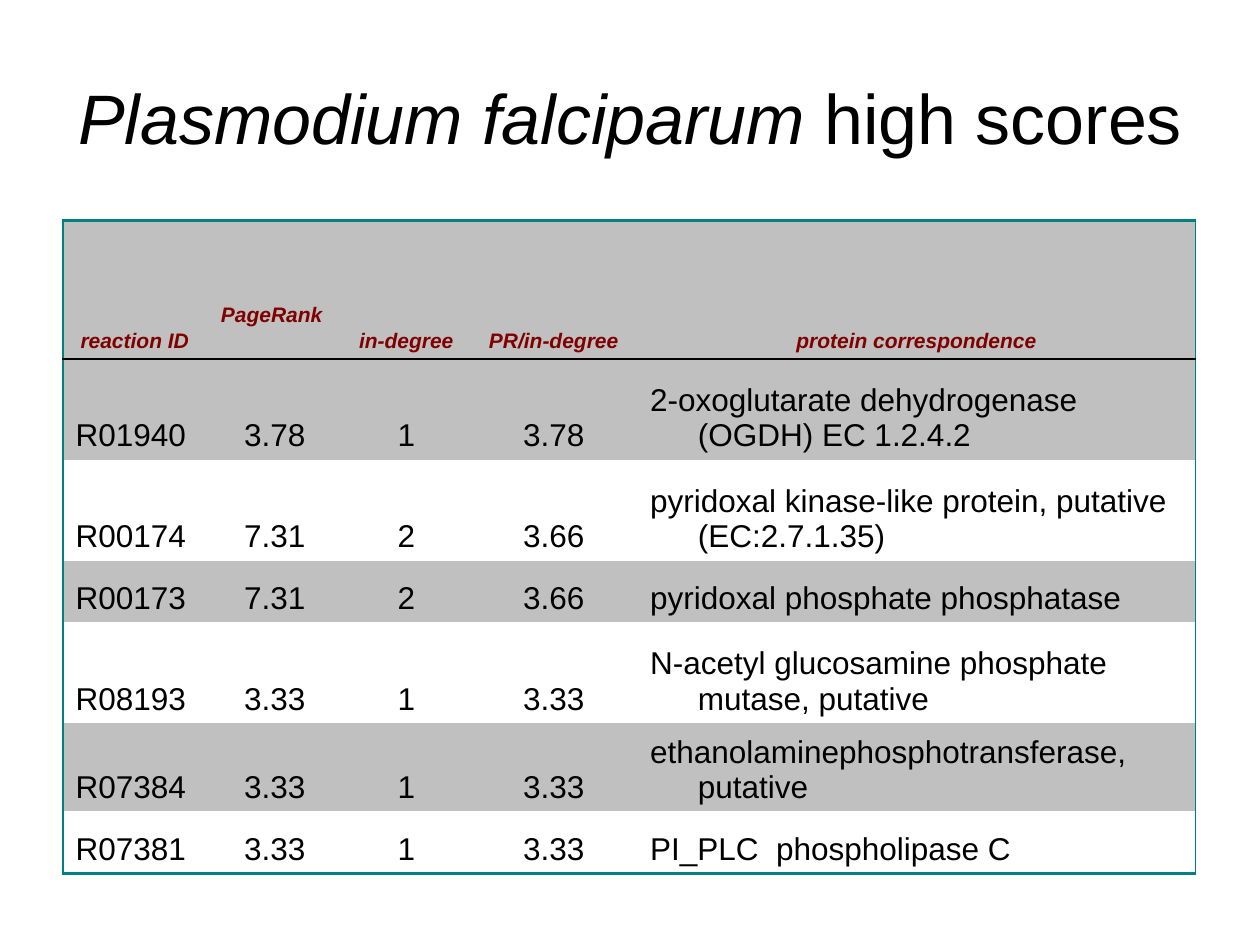
from dataclasses import dataclass

from lxml.etree import SubElement
from pptx import Presentation
from pptx.dml.color import RGBColor
from pptx.enum.text import MSO_ANCHOR, PP_ALIGN
from pptx.oxml import parse_xml
from pptx.oxml.ns import nsdecls, qn
from pptx.util import Inches, Pt


@dataclass(frozen=True)
class Theme:
    font: str = "Arial"
    text: str = "000000"
    heading: str = "800000"
    frame: str = "008080"
    rule: str = "000000"
    shaded: str = "C0C0C0"
    plain: str = "FFFFFF"
    title_size: int = 40
    heading_size: int = 12
    body_size: int = 18


THEME = Theme()
HEADINGS = ["reaction ID", "PageRank \v", "in-degree", "PR/in-degree",
            "protein correspondence"]
REACTIONS = [
    ("R01940", "3.78", "1", "3.78", "2-oxoglutarate dehydrogenase (OGDH) EC 1.2.4.2"),
    ("R00174", "7.31", "2", "3.66", "pyridoxal kinase-like protein, putative (EC:2.7.1.35)"),
    ("R00173", "7.31", "2", "3.66", "pyridoxal phosphate phosphatase"),
    ("R08193", "3.33", "1", "3.33", "N-acetyl glucosamine phosphate mutase, putative"),
    ("R07384", "3.33", "1", "3.33", "ethanolaminephosphotransferase, putative"),
    ("R07381", "3.33", "1", "3.33", "PI_PLC  phospholipase C"),
]
COLUMN_WIDTHS = [1.14, 1.08, 1.01, 1.33, 4.43]
ROW_HEIGHTS = [1.1, 0.8, 0.8, 0.49, 0.8, 0.49, 0.49]
HANGING_INDENT = 0.38

HEADING_FORMAT = {"size": Pt(THEME.heading_size), "bold": True, "italic": True}
BODY_FORMAT = {"size": Pt(THEME.body_size), "bold": False, "italic": False}


def format_run(run, color, values):
    run.font.name = THEME.font
    run.font.color.rgb = RGBColor.from_string(color)
    for attribute, value in values.items():
        setattr(run.font, attribute, value)


def add_title(slide):
    title = slide.shapes.add_textbox(Inches(0.5), Inches(0.3), Inches(9), Inches(1.25))
    frame = title.text_frame
    frame.word_wrap = True
    frame.vertical_anchor = MSO_ANCHOR.MIDDLE
    paragraph = frame.paragraphs[0]
    paragraph.alignment = PP_ALIGN.CENTER
    for words, italic in [("Plasmodium falciparum", True), (" high scores", False)]:
        run = paragraph.add_run()
        run.text = words
        format_run(run, THEME.text, {"size": Pt(THEME.title_size), "italic": italic})


def set_borders(cell, borders):
    """Draw the sides in borders, a dict of side to (colour, points); clear the rest."""
    properties = cell._tc.get_or_add_tcPr()
    for position, side in enumerate("LRTB"):
        if side in borders:
            color, points = borders[side]
            width = Pt(points)
            fill = f'<a:solidFill><a:srgbClr val="{color}"/></a:solidFill>'
        else:
            width, fill = 0, "<a:noFill/>"
        properties.insert(position, parse_xml(
            f'<a:ln{side} {nsdecls("a")} w="{width}">{fill}</a:ln{side}>'))


def borders_at(row, column):
    borders = {}
    if column == 0:
        borders["L"] = (THEME.frame, 1)
    if column == len(COLUMN_WIDTHS) - 1:
        borders["R"] = (THEME.frame, 1)
    if row == 0:
        borders["T"] = (THEME.frame, 2)
        borders["B"] = (THEME.rule, 1)
    if row == 1:
        borders["T"] = (THEME.rule, 1)
    if row == len(ROW_HEIGHTS) - 1:
        borders["B"] = (THEME.frame, 2)
    return borders


def fill_cell(cell, words, alignment, color, values, background):
    cell.vertical_anchor = MSO_ANCHOR.BOTTOM
    cell.fill.solid()
    cell.fill.fore_color.rgb = RGBColor.from_string(background)
    cell.text_frame.text = words
    paragraph = cell.text_frame.paragraphs[0]
    paragraph.alignment = alignment
    indents = paragraph._p.get_or_add_pPr()
    indents.set("marL", str(Inches(HANGING_INDENT)))
    indents.set("indent", str(-Inches(HANGING_INDENT)))
    for run in paragraph.runs:
        format_run(run, color, values)
    # An empty last line takes its height from the paragraph end mark.
    end_mark = SubElement(paragraph._p, qn("a:endParaRPr"))
    end_mark.set("sz", str(int(values["size"].pt * 100)))


def add_score_table(slide):
    table = slide.shapes.add_table(
        len(ROW_HEIGHTS), len(COLUMN_WIDTHS), Inches(0.5), Inches(1.75),
        Inches(sum(COLUMN_WIDTHS)), Inches(sum(ROW_HEIGHTS))).table
    table.first_row = table.horz_banding = False
    for column, width in zip(table.columns, COLUMN_WIDTHS):
        column.width = Inches(width)
    for row, height in zip(table.rows, ROW_HEIGHTS):
        row.height = Inches(height)

    for row, entries in enumerate([HEADINGS, *REACTIONS]):
        is_heading = row == 0
        color = THEME.heading if is_heading else THEME.text
        values = HEADING_FORMAT if is_heading else BODY_FORMAT
        background = THEME.shaded if is_heading or row % 2 else THEME.plain
        for column, words in enumerate(entries):
            is_outer = column in (0, len(entries) - 1)
            alignment = PP_ALIGN.LEFT if is_outer and not is_heading else PP_ALIGN.CENTER
            cell = table.cell(row, column)
            fill_cell(cell, words, alignment, color, values, background)
            set_borders(cell, borders_at(row, column))


def main():
    presentation = Presentation()
    presentation.slide_width = Inches(10)
    presentation.slide_height = Inches(7.5)
    slide = presentation.slides.add_slide(presentation.slide_layouts[6])
    add_title(slide)
    add_score_table(slide)
    presentation.save("out.pptx")


if __name__ == "__main__":
    main()
